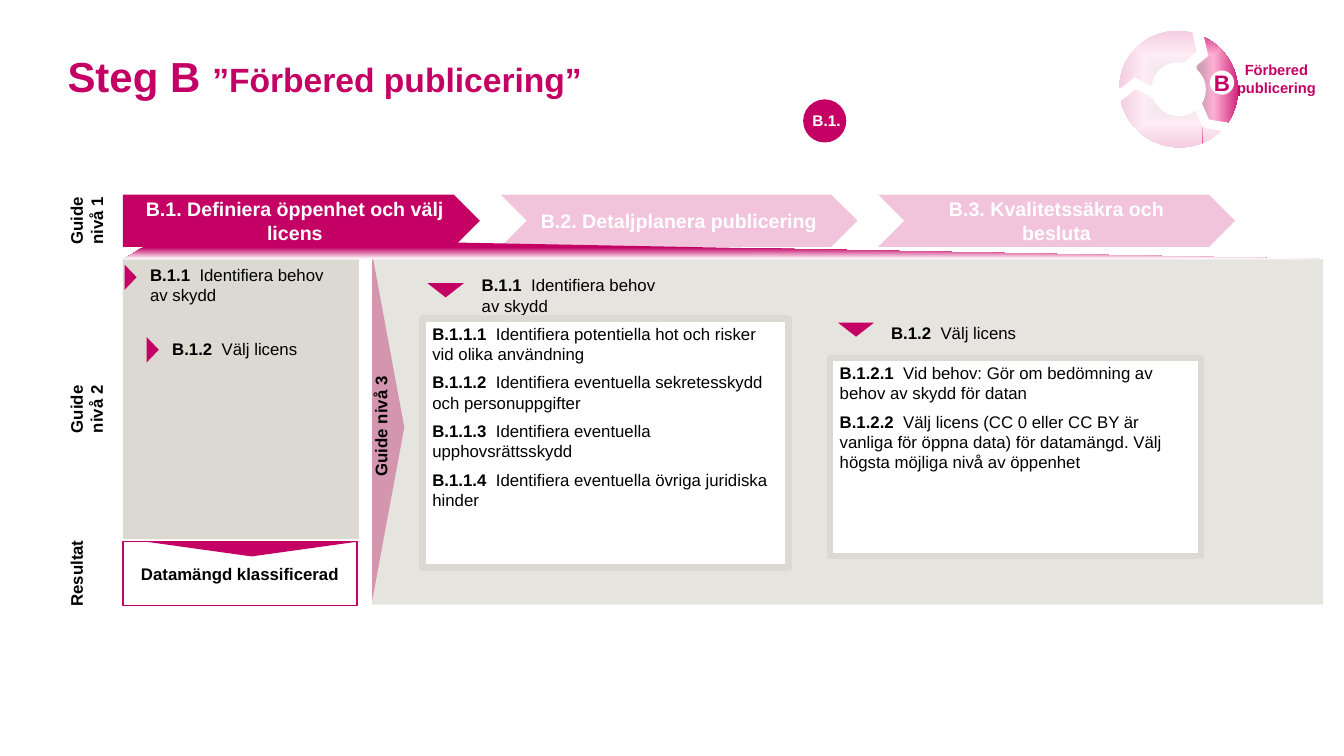
from pptx import Presentation
from pptx.dml.color import RGBColor
from pptx.enum.shapes import MSO_SHAPE as SHAPE
from pptx.enum.text import MSO_ANCHOR, PP_ALIGN
from pptx.oxml import parse_xml
from pptx.oxml.ns import nsdecls, qn
from pptx.util import Inches, Pt
from lxml.etree import SubElement

PINK, SAND, WHITE, BLACK = "C40064", "DCD9D2", "FFFFFF", "000000"

# Grid in inches: left column, stage pitch, and the rows of the diagram
LEFT, PITCH, STAGE_WIDTH = 1.22, 3.745, 3.54
STAGE_TOP, STAGE_HEIGHT = 1.93, 0.52
PANEL_TOP, PANEL_WIDTH = 2.57, 2.34
DETAIL_LEFT = 3.69

deck = Presentation()
deck.slide_width, deck.slide_height = Inches(13.33), Inches(7.5)
page = deck.slides.add_slide(deck.slide_layouts[6])


def add_box(kind, place, fill=None, opacity=100, line=None, width=1, turn=0):
    """Add a preset shape, or a text box when kind is None."""
    place = [Inches(length) for length in place]
    if kind is None:
        box = page.shapes.add_textbox(*place)
    else:
        box = page.shapes.add_shape(kind, *place)
        box.shadow.inherit = False
        box.fill.solid()
        box.fill.fore_color.rgb = RGBColor.from_string(fill)
        if opacity < 100:
            color = box.fill._xPr.find(qn("a:solidFill"))[0]
            SubElement(color, qn("a:alpha"), val=str(opacity * 1000))
        if line:
            box.line.color.rgb = RGBColor.from_string(line)
            box.line.width = Pt(width)
        else:
            box.line.fill.background()
    box.rotation = turn
    return box


def write(box, lines, size=12, color=BLACK, center=False, middle=False, inset=True, tab=0):
    """Write paragraphs, each a list of (text, bold, size or None) runs."""
    frame = box.text_frame
    frame.word_wrap = True
    frame.vertical_anchor = MSO_ANCHOR.MIDDLE if middle else MSO_ANCHOR.TOP
    if not inset:
        frame.margin_left = frame.margin_right = frame.margin_top = frame.margin_bottom = 0
    for index, runs in enumerate(lines):
        para = frame.add_paragraph() if index else frame.paragraphs[0]
        para.alignment = PP_ALIGN.CENTER if center else PP_ALIGN.LEFT
        if index and tab:
            para.space_before = Pt(6)
        if tab:
            stops = SubElement(para._p.get_or_add_pPr(), qn("a:tabLst"))
            SubElement(stops, qn("a:tab"), pos=str(Inches(tab)), algn="l")
        for text, bold, own_size in runs:
            span = para.add_run()
            span.text = text
            span.font.name = "Arial"
            span.font.size = Pt(own_size or size)
            span.font.bold = bold
            span.font.color.rgb = RGBColor.from_string(color)


# Detail panel with the arrow that leads into it
add_box(SHAPE.ISOSCELES_TRIANGLE, (2.12, 4.08, 3.46, 0.32), PINK, turn=90)
add_box(SHAPE.RECTANGLE, (DETAIL_LEFT, PANEL_TOP, 9.43, 3.43), SAND, 69)

# Title
title = add_box(None, (0.67, 0.5, 9.97, 0.91))
write(title, [[("Steg B ", True, 30), ("”Förbered publicering”", True, 24)]],
      color=PINK, inset=False)

# Result
result = add_box(SHAPE.RECTANGLE, (LEFT, 5.37, 2.32, 0.64), WHITE, line=PINK)
write(result, [[("Datamängd klassificerad", True, None)]], center=True, middle=True)
add_box(SHAPE.ISOSCELES_TRIANGLE, (1.42, 5.37, 2.15, 0.15), PINK, turn=180)

# Detail cards: heading, heading place, marker place, card place, steps
cards = [
    (("B.1.1", "Identifiera behov av skydd"), (4.68, 2.75), (4.24, 2.81),
     (4.19, 3.16, 3.63, 2.47), [
        ("B.1.1.1", "Identifiera potentiella hot och risker vid olika användning"),
        ("B.1.1.2", "Identifiera eventuella sekretesskydd och personuppgifter"),
        ("B.1.1.3", "Identifiera eventuella upphovsrättsskydd"),
        ("B.1.1.4", "Identifiera eventuella övriga juridiska hinder")]),
    (("B.1.2", "Välj licens"), (8.74, 3.12), (8.31, 3.2),
     (8.23, 3.55, 3.68, 1.97), [
        ("B.1.2.1", "Vid behov: Gör om bedömning av behov av skydd för datan"),
        ("B.1.2.2", "Välj licens (CC 0 eller CC BY är vanliga för öppna data) för datamängd. "
                    "Välj högsta möjliga nivå av öppenhet")]),
]
for (number, name), heading_at, marker_at, card_at, steps in cards:
    heading = add_box(None, (*heading_at, 2.03, 0.36))
    write(heading, [[(number + "\t", True, None), (name, False, None)]], middle=True, tab=0.49)
    card = add_box(SHAPE.RECTANGLE, card_at, WHITE, line=SAND, width=4.5)
    write(card, [[(code + "\t", True, None), (step, False, None)] for code, step in steps],
          tab=0.63)
    add_box(SHAPE.ISOSCELES_TRIANGLE, (*marker_at, 0.36, 0.14), PINK, turn=180)

# Later stages, faded by a veil
for column, stage in enumerate(["B.2. Detaljplanera publicering",
                                "B.3. Kvalitetssäkra och besluta"], start=1):
    chevron = add_box(SHAPE.CHEVRON, (LEFT + column * PITCH, STAGE_TOP, STAGE_WIDTH, STAGE_HEIGHT), PINK)
    write(chevron, [[(stage, True, None)]], 14, WHITE, center=True, middle=True)
add_box(SHAPE.RECTANGLE, (4.86, 1.88, 8.08, 0.65), WHITE, 77)

# Level 2 panel
add_box(SHAPE.RECTANGLE, (LEFT, PANEL_TOP, PANEL_WIDTH, 2.78), SAND)
for number, name, left, top, width, marker_top in [
        ("B.1.1", "Identifiera behov av skydd", 1.39, 2.58, 2.08, 2.69),
        ("B.1.2", "Välj licens", 1.61, 3.31, 1.98, 3.41)]:
    item = add_box(None, (left, top, width, 0.3))
    write(item, [[(number + "\t", True, None), (name, False, None)]], tab=0.49)
    add_box(SHAPE.ISOSCELES_TRIANGLE, (left - 0.22, marker_top, 0.25, 0.12), PINK, turn=90)

# Cycle emblem
ring = add_box(SHAPE.OVAL, (11.1, 0.31, 1.18, 1.15), PINK, turn=22.7)
add_box(SHAPE.OVAL, (11.42, 0.62, 0.54, 0.53), WHITE, turn=22.7)
for place, turn in [((11.15, 0.71, 0.23, 0.34), 264.7),
                    ((11.75, 0.32, 0.24, 0.39), 18.7),
                    ((11.89, 1, 0.2, 0.37), 128.4)]:
    add_box(SHAPE.CHEVRON, place, WHITE, turn=turn)
letter = add_box(SHAPE.OVAL, (12, 0.7, 0.24, 0.24), WHITE)
write(letter, [[("B", True, None)]], 16, PINK, center=True, middle=True, inset=False)
phase = add_box(None, (12.04, 0.5, 1.24, 0.56))
write(phase, [[("Förbered publicering", True, None)]], 10.5, PINK, center=True, middle=True)
for place, turn in [((10.92, 0.87, 1, 0.65), 0),
                    ((11.04, 0.06, 0.7, 0.96), 90),
                    ((11.82, 1.32, 0.46, 0.24), 90)]:
    add_box(SHAPE.RECTANGLE, place, WHITE, 77, turn=turn)

# Beam from the current stage down to the panels
builder = page.shapes.build_freeform(Inches(1.23), Inches(PANEL_TOP))
builder.add_line_segments([(Inches(1.58), Inches(2.35)), (Inches(13.11), Inches(PANEL_TOP))])
beam = builder.convert_to_shape()
beam.shadow.inherit = False
beam.fill.solid()
beam.line.fill.background()

# Gradients of the ring and the beam
for shape, stops, direction in [
        (ring, [(1, "808080"), (45, "FDB0D4"), (85, "C50366")],
         '<a:path path="shape"><a:fillToRect l="50000" t="50000" r="50000" b="50000"/></a:path>'),
        (beam, [(48, PINK), (100, WHITE)], '<a:lin ang="5400000" scaled="0"/>')]:
    stop_list = "".join(f'<a:gs pos="{share * 1000}"><a:srgbClr val="{color}"/></a:gs>'
                        for share, color in stops)
    gradient = parse_xml(f'<a:gradFill {nsdecls("a")} rotWithShape="1">'
                         f'<a:gsLst>{stop_list}</a:gsLst>{direction}</a:gradFill>')
    properties = shape.fill._xPr
    properties.replace(properties.find(qn("a:solidFill")), gradient)

# Current stage
current = add_box(SHAPE.PENTAGON, (LEFT, STAGE_TOP, STAGE_WIDTH, STAGE_HEIGHT), PINK)
write(current, [[("B.1. Definiera öppenhet och välj licens", True, None)]],
      14, WHITE, center=True, middle=True)

# Stage badge
add_box(SHAPE.RECTANGLE, (8.52, 0.24, 1.43, 1.07), WHITE, 77)
add_box(SHAPE.OVAL, (7.98, 1, 0.4, 0.4), PINK, line=PINK, width=2)
badge = add_box(None, (7.96, 1.05, 0.6, 0.29))
write(badge, [[("B.1.", True, None)]], 11, WHITE)

# Upright row labels
for lines, place in [(["Guide nivå 1"], (0.47, 1.97, 0.81, 0.44)),
                     (["Guide", "nivå 2"], (-0.61, 3.84, 2.97, 0.44)),
                     (["Resultat"], (0.37, 5.47, 1.01, 0.44)),
                     (["Guide nivå 3"], (2.31, 4.11, 2.97, 0.24))]:
    label = add_box(None, place, turn=270)
    write(label, [[(line, True, None)] for line in lines], center=True, inset=False)

deck.save("out.pptx")
